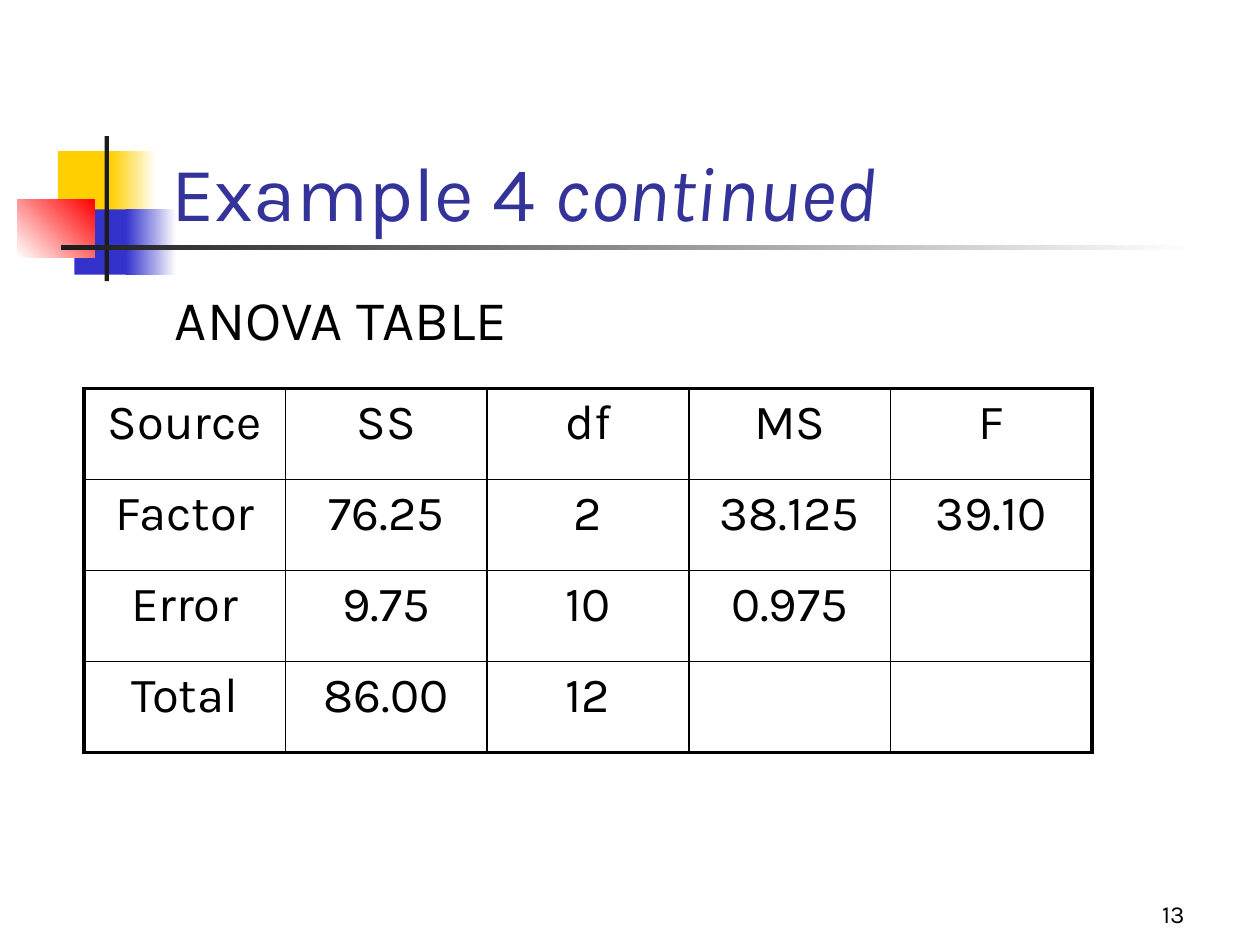
from lxml import etree
from pptx import Presentation
from pptx.dml import color
from pptx.enum import shapes, text
from pptx.oxml import ns
from pptx.util import Pt


def rgb(value):
    return color.RGBColor.from_string(value)


def write(paragraph, content, size, ink="000000", **extra):
    """Add a run to the paragraph in the slide's typeface."""
    run = paragraph.add_run()
    run.text = content
    for name, value in {"name": "Karla", "size": Pt(size), **extra}.items():
        setattr(run.font, name, value)
    run.font.color.rgb = rgb(ink)


presentation = Presentation()
presentation.slide_width, presentation.slide_height = Pt(720), Pt(540)
slide = presentation.slides.add_slide(presentation.slide_layouts[5])

# Corner ornament and title rule: box, start colour, end colour, angle
ornament = [
    ((33.1, 86.4, 34.6, 37.4), "FFCF01", None, None),
    ((63.4, 86.4, 25.9, 37.4), "FFCF01", "FFFFFF", 0),
    ((42.5, 119.6, 33.1, 37.4), "3333CC", None, None),
    ((72, 119.6, 28.8, 37.4), "3333CC", "FFFFFF", 0),
    ((10, 113.8, 44, 33.2), "FFFFFF", "FF0000", 45),
    ((59.8, 77.8, 2.4, 82.8), "1C1C1C", None, None),
    ((34.8, 140.2, 648, 2.4), "1C1C1C", "FFFFFF", 0),
]
for box, start, end, angle in ornament:
    shape = slide.shapes.add_shape(shapes.MSO_SHAPE.RECTANGLE, *map(Pt, box))
    shape.shadow.inherit = False
    shape.line.fill.background()
    if end is None:
        shape.fill.solid()
        shape.fill.fore_color.rgb = rgb(start)
    else:
        shape.fill.gradient()
        shape.fill.gradient_angle = angle
        for stop, stop_color in zip(shape.fill.gradient_stops, (start, end)):
            stop.color.rgb = rgb(stop_color)

# Title, brought in front of the ornament
title = slide.shapes.title
title.left, title.top, title.width, title.height = map(Pt, (90.7, 49, 613.4, 90))
title.element.getparent().append(title.element)
frame = title.text_frame
frame.auto_size = text.MSO_AUTO_SIZE.NONE
frame.vertical_anchor = text.MSO_ANCHOR.BOTTOM
paragraph = frame.paragraphs[0]
paragraph.alignment = text.PP_ALIGN.LEFT
write(paragraph, "Example 4 ", 44, "333399")
write(paragraph, "continued", 44, "333399", italic=True)

# Subheading and slide number
labels = [
    ("ANOVA TABLE", (92.9, 159.1, 612, 40), 32, "TOP", "LEFT", 6.4),
    ("13", (534.2, 498.2, 149.8, 36), 14, "BOTTOM", "RIGHT", 0),
]
for content, box, size, anchor, alignment, space in labels:
    frame = slide.shapes.add_textbox(*map(Pt, box)).text_frame
    frame.word_wrap = True
    frame.vertical_anchor = text.MSO_ANCHOR[anchor]
    paragraph = frame.paragraphs[0]
    paragraph.alignment = text.PP_ALIGN[alignment]
    paragraph.space_before = Pt(space)
    write(paragraph, content, size)

# ANOVA table
rows = [
    ["Source", "SS", "df", "MS", "F"],
    ["Factor", "76.25", "2", "38.125", "39.10"],
    ["Error", "9.75", "10", "0.975", ""],
    ["Total", "86.00", "12", "", ""],
]
last_row, last_column = len(rows) - 1, len(rows[0]) - 1
graphic = slide.shapes.add_table(
    len(rows), len(rows[0]), Pt(48), Pt(222), Pt(576), Pt(208))
table = graphic.table
table.first_row = table.horz_banding = False

for row, values in enumerate(rows):
    for column, value in enumerate(values):
        cell = table.cell(row, column)
        cell.fill.background()
        paragraph = cell.text_frame.paragraphs[0]
        paragraph.alignment = text.PP_ALIGN.CENTER
        paragraph.space_before = Pt(5.6)
        paragraph.font.size = Pt(28)
        if value:
            write(paragraph, value, 28)

        properties = cell._tc.get_or_add_tcPr()
        outer_edges = {
            "a:lnL": column == 0,
            "a:lnR": column == last_column,
            "a:lnT": row == 0,
            "a:lnB": row == last_row,
        }
        for position, (tag, is_outer) in enumerate(outer_edges.items()):
            border = etree.Element(ns.qn(tag), w=str(Pt(2.25 if is_outer else 1)))
            fill = etree.SubElement(border, ns.qn("a:solidFill"))
            etree.SubElement(fill, ns.qn("a:srgbClr"), val="000000")
            properties.insert(position, border)

presentation.save("out.pptx")
